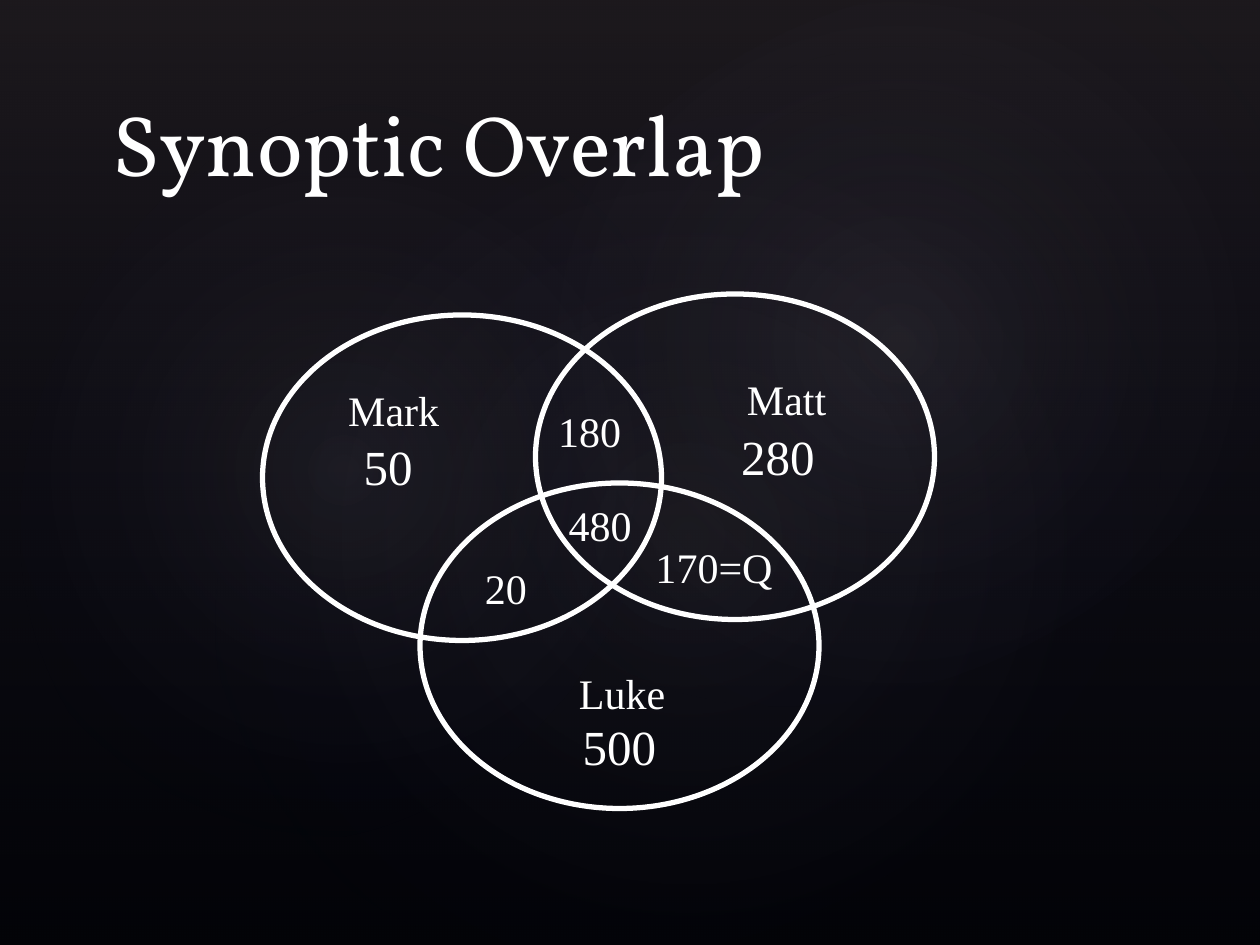
from lxml import etree
from pptx import Presentation
from pptx.dml.color import RGBColor
from pptx.enum import shapes, text
from pptx.oxml import ns
from pptx.util import Pt

WHITE = RGBColor(0xFF, 0xFF, 0xFF)
BLACK = RGBColor(0x00, 0x00, 0x00)
PLUM = RGBColor(0x50, 0x46, 0x52)
MAUVE = RGBColor(0xC4, 0xBC, 0xC6)
NAVY = RGBColor(0x24, 0x28, 0x52)

TITLE_FONT = "Vollkorn"
LABEL_FONT = "Times New Roman"

GLOWS = [
    (108, 82, 570, 449, 328.7, 7),
    (-22, 92, 436, 353, 294.3, 8),
    (258, 9, 510, 374, 328.7, 8),
]
CIRCLE_WIDTH, CIRCLE_HEIGHT = 228, 186
CIRCLES = [(156, 0), (0, 12), (90, 108)]
NAME_SIZE, TOTAL_SIZE = 24, 28
LABELS = [
    ("Mark", 41.5, 48, 67, NAME_SIZE),
    ("Matt", 269.5, 42, 60, NAME_SIZE),
    ("Luke", 173.5, 210, 64, NAME_SIZE),
    ("20", 119, 150, 40, NAME_SIZE),
    ("180", 161, 60, 52, NAME_SIZE),
    ("170=Q", 216, 138, 84, NAME_SIZE),
    ("480", 167, 114, 52, NAME_SIZE),
    ("280", 257.7, 72, 73.5, TOTAL_SIZE),
    ("500", 167.2, 238, 73.5, TOTAL_SIZE),
    ("50", 35, 78, 73.5, TOTAL_SIZE),
]


def add_outline_shape(slide, kind, left, top, width, height):
    shape = slide.shapes.add_shape(kind, Pt(left), Pt(top), Pt(width), Pt(height))
    shape.shadow.inherit = False
    shape.fill.background()
    return shape


def set_gradient(shape, stops, radial=False):
    shape.line.fill.background()
    properties = shape._element.spPr
    gradient = etree.Element(ns.qn("a:gradFill"), rotWithShape="1")
    stop_list = etree.SubElement(gradient, ns.qn("a:gsLst"))
    for position, color, opacity in stops:
        stop = etree.SubElement(stop_list, ns.qn("a:gs"), pos=str(position * 1000))
        color_element = etree.SubElement(stop, ns.qn("a:srgbClr"), val=str(color))
        etree.SubElement(color_element, ns.qn("a:alpha"), val=str(opacity * 1000))
    if radial:
        direction = etree.SubElement(gradient, ns.qn("a:path"), path="circle")
        sides = dict.fromkeys("ltrb", "50000")
        etree.SubElement(direction, ns.qn("a:fillToRect"), **sides)
    else:
        etree.SubElement(gradient, ns.qn("a:lin"), ang="5400000", scaled="0")
    properties.replace(properties.find(ns.qn("a:noFill")), gradient)


def add_backdrop(slide, left, top, width, height):
    background = slide.background.fill
    background.solid()
    background.fore_color.rgb = BLACK
    veil = add_outline_shape(
        slide, shapes.MSO_SHAPE.RECTANGLE, left, top, width, height
    )
    set_gradient(veil, [(0, PLUM, 36), (100, NAVY, 10)])
    for x, y, glow_width, glow_height, rotation, opacity in GLOWS:
        glow = add_outline_shape(
            slide, shapes.MSO_SHAPE.OVAL, left + x, top + y, glow_width, glow_height
        )
        glow.rotation = rotation
        set_gradient(glow, [(0, MAUVE, opacity), (58, NAVY, 0)], radial=True)


def place_title(slide, left, top, width, height):
    title = slide.shapes.title
    title.left, title.top = Pt(left), Pt(top)
    title.width, title.height = Pt(width), Pt(height)
    frame = title.text_frame
    frame.text = "Synoptic Overlap"
    frame.vertical_anchor = text.MSO_ANCHOR.BOTTOM
    frame.auto_size = text.MSO_AUTO_SIZE.NONE
    format_paragraph(frame.paragraphs[0], TITLE_FONT, 49, text.PP_ALIGN.LEFT)
    slide.shapes._spTree.append(title._element)


def format_paragraph(paragraph, font_name, size, alignment):
    paragraph.alignment = alignment
    paragraph.font.name = font_name
    paragraph.font.size = Pt(size)
    paragraph.font.color.rgb = WHITE


def add_label(slide, wording, left, top, width, size):
    box = slide.shapes.add_textbox(Pt(left), Pt(top), Pt(width), Pt(size * 1.2 + 7.2))
    frame = box.text_frame
    frame.text = wording
    frame.word_wrap = False
    frame.auto_size = text.MSO_AUTO_SIZE.SHAPE_TO_FIT_TEXT
    format_paragraph(frame.paragraphs[0], LABEL_FONT, size, text.PP_ALIGN.CENTER)


def add_venn_diagram(slide, left, top):
    for x, y in CIRCLES:
        circle = add_outline_shape(
            slide, shapes.MSO_SHAPE.OVAL, left + x, top + y,
            CIRCLE_WIDTH, CIRCLE_HEIGHT,
        )
        circle.line.color.rgb = WHITE
        circle.line.width = Pt(3)
    for wording, x, y, width, size in LABELS:
        add_label(slide, wording, left + x, top + y, width, size)


def main():
    presentation = Presentation()
    presentation.slide_width, presentation.slide_height = Pt(720), Pt(540)
    slide = presentation.slides.add_slide(presentation.slide_layouts[5])
    add_backdrop(slide, 0, 0, 720, 540)
    place_title(slide, 57, 42, 594, 72)
    add_venn_diagram(slide, 150, 168)
    presentation.save("out.pptx")


if __name__ == "__main__":
    main()
